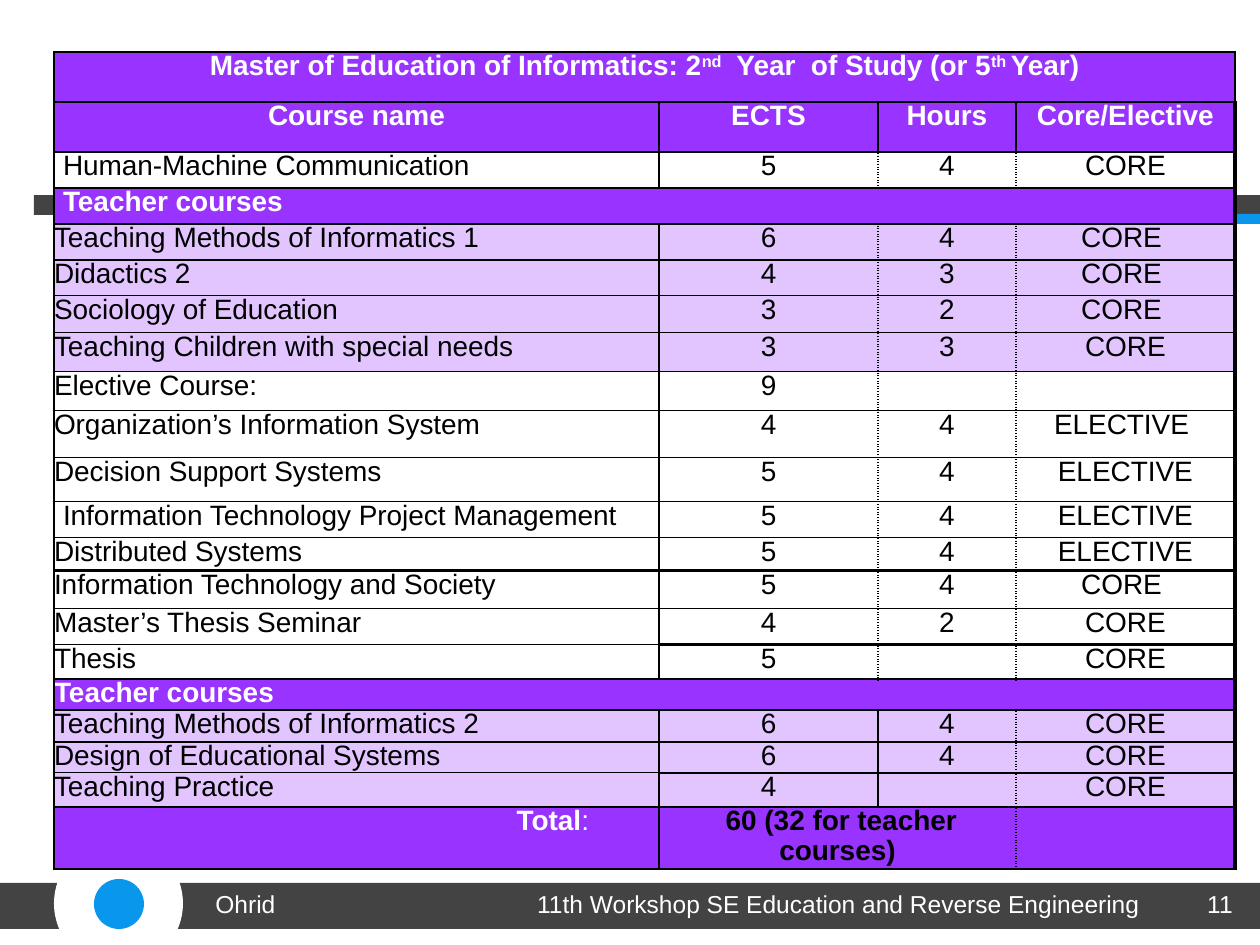
from lxml.etree import SubElement
from pptx import Presentation
from pptx.dml.color import RGBColor
from pptx.enum.shapes import MSO_SHAPE
from pptx.enum.text import PP_ALIGN
from pptx.oxml.ns import qn
from pptx.util import Emu, Pt

WHITE = RGBColor(0xFF, 0xFF, 0xFF)
BLACK = RGBColor(0x00, 0x00, 0x00)
GRAY = RGBColor(0x43, 0x43, 0x43)
BLUE = RGBColor(0x09, 0x96, 0xED)
PURPLE = RGBColor(0x99, 0x33, 0xFF)
LILAC = RGBColor(0xE2, 0xC5, 0xFF)

TITLE = [("Master of Education of Informatics: 2", 0), ("nd", 30), ("  Year  of Study (or 5", 0),
         ("th ", 30), ("Year)", 0)]
ROWS = [
    (50, PURPLE, [TITLE]),
    (50, PURPLE, ["Course name", "ECTS", "Hours", "Core/Elective"]),
    (36, WHITE, ["Human-Machine Communication", "5", "4", "CORE"]),
    (36, PURPLE, ["Teacher courses"]),
    (36, LILAC, ["Teaching Methods of Informatics 1", "6", "4", "CORE "]),
    (36, LILAC, ["Didactics 2", "4", "3", "CORE "]),
    (37, LILAC, ["Sociology of Education", "3", "2", "CORE "]),
    (39, LILAC, ["Teaching Children with special needs", "3", "3", "CORE"]),
    (39, WHITE, ["Elective Course:", "9", "", ""]),
    (47, WHITE, ["Organization’s Information System", "4", "4", "ELECTIVE "]),
    (44, WHITE, ["Decision Support Systems", "5", "4", "ELECTIVE"]),
    (36, WHITE, ["Information Technology Project Management", "5", "4", "ELECTIVE"]),
    (33, WHITE, ["Distributed Systems", "5", "4", "ELECTIVE"]),
    (38, WHITE, ["Information Technology and Society", "5", "4", "CORE "]),
    (36, WHITE, ["Master’s Thesis Seminar", "4", "2", "CORE"]),
    (31, WHITE, ["Thesis", "5", "", "CORE"]),
    (31, PURPLE, ["Teacher courses"]),
    (32, LILAC, ["Teaching Methods of Informatics 2", "6", "4", "CORE"]),
    (31, LILAC, ["Design of Educational Systems", "6", "4", "CORE"]),
    (31, LILAC, ["Teaching Practice", "4", "", "CORE"]),
    (62, PURPLE, ["Total", " 60 (32 for teacher courses)", None, ""]),
]
COLUMNS = [605, 219, 138, 219]
TABLE_LEFT, TABLE_TOP = 54, 52
HEADER_ROW, TOTAL_ROW = 1, len(ROWS) - 1
INSET_ROWS = {0, 1, 2, 3, 11}
SOLID_HOURS_ROWS = {HEADER_ROW, 17, 18, 19}
HEAVY_BELOW = {HEADER_ROW, *range(14, len(ROWS))}
THICK_BELOW = 12
NO_STYLE = "{2D5ABB26-0587-4C30-8999-92F81FD0307C}"

DECORATION = [
    (MSO_SHAPE.RECTANGLE, GRAY, 174, 883, 1086, 46),
    (MSO_SHAPE.RECTANGLE, GRAY, 0, 883, 64, 46),
    (MSO_SHAPE.OVAL, WHITE, 54, 839, 129, 129),
    (MSO_SHAPE.OVAL, BLUE, 94, 879, 50, 50),
    (MSO_SHAPE.RECTANGLE, GRAY, 34, 195, 1226, 20),
    (MSO_SHAPE.RECTANGLE, BLUE, 54, 214, 1206, 10),
]
FOOTER = [
    ("11", PP_ALIGN.RIGHT, 1176, 69),
    ("Ohrid", PP_ALIGN.LEFT, 203, 348),
    ("11th Workshop SE Education and Reverse Engineering", PP_ALIGN.CENTER, 501, 675),
]


def px(length):
    return Emu(round(length * 914400 / 126))


def write(paragraph, text, size=16, color=BLACK, bold=False, align=PP_ALIGN.LEFT, raised=0):
    paragraph.alignment = align
    run = paragraph.add_run()
    run.text = text
    run.font.name = "Arial"
    run.font.size = Pt(size)
    run.font.bold = bold
    run.font.color.rgb = color
    if raised:
        run.font._element.set("baseline", str(raised * 1000))


def draw_border(properties, side, width, dash):
    line = SubElement(properties, qn(f"a:{side}"), w=str(Pt(width)))
    fill = SubElement(line, qn("a:solidFill"))
    SubElement(fill, qn("a:srgbClr"), val=str(BLACK))
    SubElement(line, qn("a:prstDash"), val=dash)


def width_below(row, column):
    if row == THICK_BELOW:
        return 2.25
    return 1.5 if column and row in HEAVY_BELOW else 1


def edge_style(row, edge):
    if edge == len(COLUMNS):
        return (2.25 if row >= HEADER_ROW else 1), "solid"
    solid = edge < 2 or row == HEADER_ROW or (edge == 2 and row in SOLID_HOURS_ROWS)
    return 1, "solid" if solid else "sysDot"


def border_cell(cell, row, first, last):
    properties = cell._tc.get_or_add_tcPr()
    draw_border(properties, "lnL", *edge_style(row, first))
    draw_border(properties, "lnR", *edge_style(row, last + 1))
    draw_border(properties, "lnT", width_below(row - 1, first), "solid")
    draw_border(properties, "lnB", width_below(row, first), "solid")


def fill_cell(cell, content, row, column, background):
    cell.fill.solid()
    cell.fill.fore_color.rgb = background
    paragraph = cell.text_frame.paragraphs[0]
    heading = background == PURPLE
    color = WHITE if heading and (row != TOTAL_ROW or column == 0) else BLACK
    centered = column > 0 or row <= HEADER_ROW
    align = PP_ALIGN.CENTER if centered else PP_ALIGN.LEFT
    if row == TOTAL_ROW and column == 0:
        align = PP_ALIGN.RIGHT
        cell.margin_right = px(70)
    pieces = content if isinstance(content, list) else [(content, 0)]
    for text, raised in pieces:
        if text:
            write(paragraph, text, color=color, bold=heading, align=align, raised=raised)
    if content == "Total":
        write(paragraph, ":", color=color, align=align)


def add_course_table(slide):
    heights = [height for height, _, _ in ROWS]
    frame = slide.shapes.add_table(len(ROWS), len(COLUMNS), px(TABLE_LEFT), px(TABLE_TOP),
                                   px(sum(COLUMNS)), px(sum(heights)))
    table = frame.table
    table.first_row = table.horz_banding = False
    table._tbl.tblPr.find(qn("a:tableStyleId")).text = NO_STYLE
    for column, width in enumerate(COLUMNS):
        table.columns[column].width = px(width)
    for row, (height, background, contents) in enumerate(ROWS):
        table.rows[row].height = px(height)
        padded = contents + [None] * (len(COLUMNS) - len(contents))
        for column, content in enumerate(padded):
            cell = table.cell(row, column)
            cell.margin_top = cell.margin_bottom = 0
            cell.margin_left = cell.margin_right = px(9 if row in INSET_ROWS else 0)
            paragraph = cell.text_frame.paragraphs[0]
            paragraph.line_spacing = 0.96
            paragraph._p.get_or_add_endParaRPr().set("sz", "1600")
            if content is None:
                continue
            last = column
            while last + 1 < len(COLUMNS) and padded[last + 1] is None:
                last += 1
            if last > column:
                cell.merge(table.cell(row, last))
            border_cell(cell, row, column, last)
            fill_cell(cell, content, row, column, background)


def main():
    presentation = Presentation()
    presentation.slide_width, presentation.slide_height = px(1260), px(945)
    slide = presentation.slides.add_slide(presentation.slide_layouts[6])
    for kind, color, *box in DECORATION:
        shape = slide.shapes.add_shape(kind, *map(px, box))
        shape.shadow.inherit = False
        shape.fill.solid()
        shape.fill.fore_color.rgb = color
        shape.line.fill.background()
    add_course_table(slide)
    for text, align, left, width in FOOTER:
        frame = slide.shapes.add_textbox(px(left), px(883), px(width), px(62)).text_frame
        frame.word_wrap = True
        write(frame.paragraphs[0], text, size=14, color=WHITE, align=align)
    presentation.save("out.pptx")


if __name__ == "__main__":
    main()
